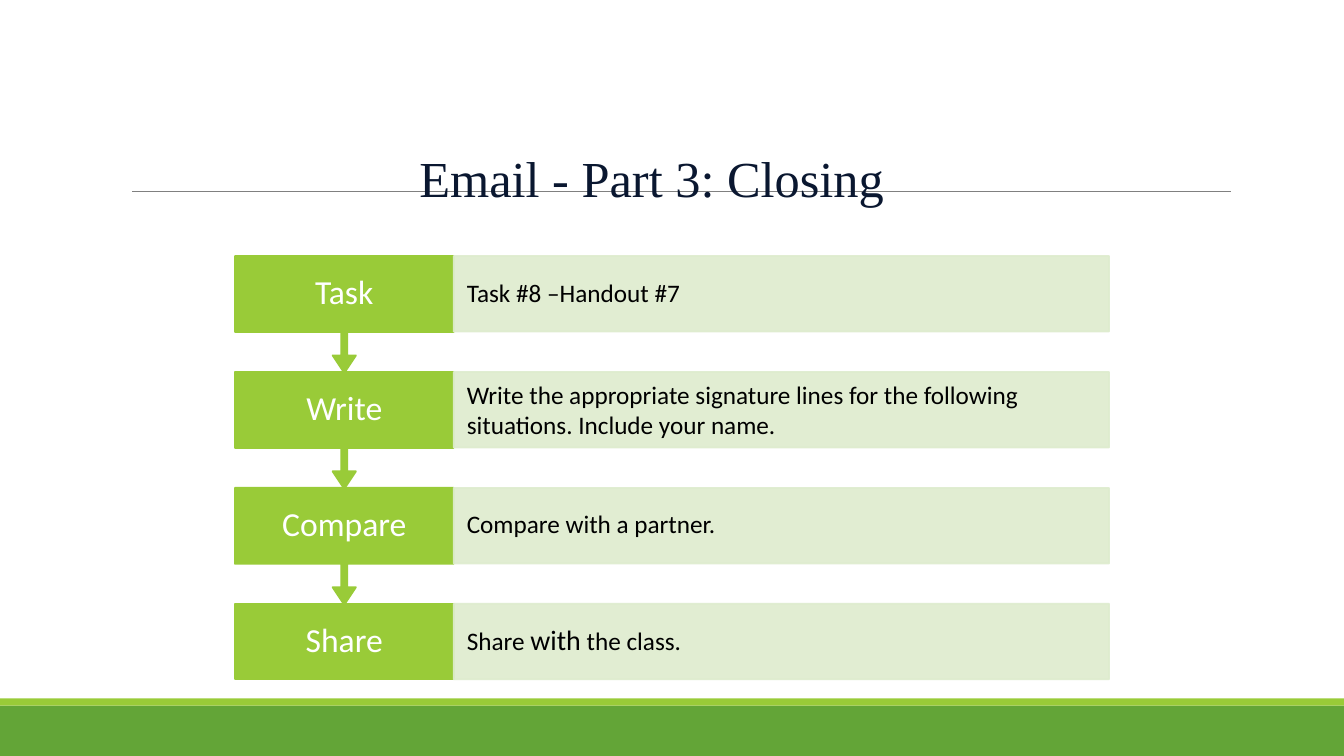
from lxml import etree
from pptx import Presentation
from pptx.dml.color import RGBColor
from pptx.enum.shapes import MSO_CONNECTOR, MSO_SHAPE
from pptx.enum.text import MSO_ANCHOR, MSO_AUTO_SIZE, PP_ALIGN
from pptx.oxml.ns import qn
from pptx.util import Pt

RECT = MSO_SHAPE.RECTANGLE
CALLOUT = MSO_SHAPE.DOWN_ARROW_CALLOUT
STRAIGHT = MSO_CONNECTOR.STRAIGHT
TOP, MIDDLE = MSO_ANCHOR.TOP, MSO_ANCHOR.MIDDLE
LEFT, CENTER = PP_ALIGN.LEFT, PP_ALIGN.CENTER
NO_FIT = MSO_AUTO_SIZE.NONE

EMU_PER_PX = 9144
COLORS = {
    "footer": "63A537",
    "accent": "99CB38",
    "pale": "DEECCE",
    "rule": "808080",
    "title": "0A1730",
    "white": "FFFFFF",
    "black": "000000",
}
STEPS = [
    ("Task", [("Task #8 –Handout #7", 18)], 0.9),
    ("Write", [("Write the appropriate signature lines for the following "
                "situations. Include your name.", 18)], 1.0),
    ("Compare", [("Compare with a partner.", 18)], 0.9),
    ("Share", [("Share ", 18), ("with", 20), (" the class.", 18)], 0.9),
]
FIRST_TOP, PITCH = 254, 115
BOX_HEIGHT, CALLOUT_HEIGHT = 75, 116
LABEL_LEFT, LABEL_WIDTH = 233, 217
DETAIL_LEFT, DETAIL_WIDTH = 450, 650


def px(value):
    return round(value * EMU_PER_PX)


def color(name):
    return RGBColor.from_string(COLORS[name])


class SlideBuilder:
    def __init__(self, deck):
        self.page = deck.slides.add_slide(deck.slide_layouts[5])

    def shape(self, kind, bounds, fill, outlined=True, opacity=100):
        box = self.page.shapes.add_shape(kind, *map(px, bounds))
        box.shadow.inherit = False
        box.fill.solid()
        box.fill.fore_color.rgb = color(fill)
        if outlined:
            box.line.width = Pt(1.25)
            box.line.color.rgb = color(fill)
        else:
            box.line.fill.background()
        if opacity < 100:
            for node in box.element.spPr.iter(qn("a:srgbClr")):
                etree.SubElement(node, qn("a:alpha"), val=str(opacity * 1000))
        return box

    def rule(self, left, right, top):
        line = self.page.shapes.add_connector(
            STRAIGHT, px(left), px(top), px(right), px(top))
        line.line.width = Pt(0.5)
        line.line.color.rgb = color("rule")
        etree.SubElement(line.element.spPr, qn("a:effectLst"))

    def text(self, box, spans, ink, font, align, spacing=0.9,
             anchor=MIDDLE, margins=(15, 0)):
        side, top = margins
        frame_format = {
            "word_wrap": True, "auto_size": NO_FIT, "vertical_anchor": anchor,
            "margin_left": px(side), "margin_right": px(side),
            "margin_top": px(top), "margin_bottom": px(top),
        }
        for name, value in frame_format.items():
            setattr(box.text_frame, name, value)
        para = box.text_frame.paragraphs[0]
        para.alignment = align
        para.line_spacing = spacing
        for words, size in spans:
            span = para.add_run()
            span.text = words
            for name, value in {"name": font, "size": Pt(size)}.items():
                setattr(span.font, name, value)
            span.font.color.rgb = color(ink)

    def title(self, words, bounds):
        box = self.page.shapes.title
        self.page.shapes.element.append(box.element)
        for name, value in zip(("left", "top", "width", "height"), bounds):
            setattr(box, name, px(value))
        self.text(box, [(words, 36)], "title", "Times New Roman", LEFT,
                  0.85, TOP, (9, 10))

    def step(self, top, label, details, spacing, has_arrow):
        kind = CALLOUT if has_arrow else RECT
        height = CALLOUT_HEIGHT if has_arrow else BOX_HEIGHT
        box = self.shape(kind, (LABEL_LEFT, top, LABEL_WIDTH, height), "accent")
        if has_arrow:
            for index, value in enumerate((0.05, 0.1, 0.15, 0.65)):
                box.adjustments[index] = value
        self.text(box, [(label, 24)], "white", "Calibri", CENTER)
        box = self.shape(RECT, (DETAIL_LEFT, top, DETAIL_WIDTH, BOX_HEIGHT),
                         "pale", opacity=90)
        self.text(box, details, "black", "Calibri", LEFT, spacing,
                  margins=(13, 0))


def main():
    deck = Presentation()
    deck.slide_width, deck.slide_height = px(1333), px(750)
    slide = SlideBuilder(deck)
    slide.shape(RECT, (0, 700, 1333, 50), "footer", outlined=False)
    slide.shape(RECT, (0, 693, 1333, 7), "accent", outlined=False)
    slide.rule(131, 1221, 190)
    slide.title("Email - Part 3: Closing", (407, 145, 520, 85))
    last = len(STEPS) - 1
    for index, (label, details, spacing) in enumerate(STEPS):
        slide.step(FIRST_TOP + index * PITCH, label, details, spacing,
                   index < last)
    deck.save("out.pptx")


if __name__ == "__main__":
    main()
